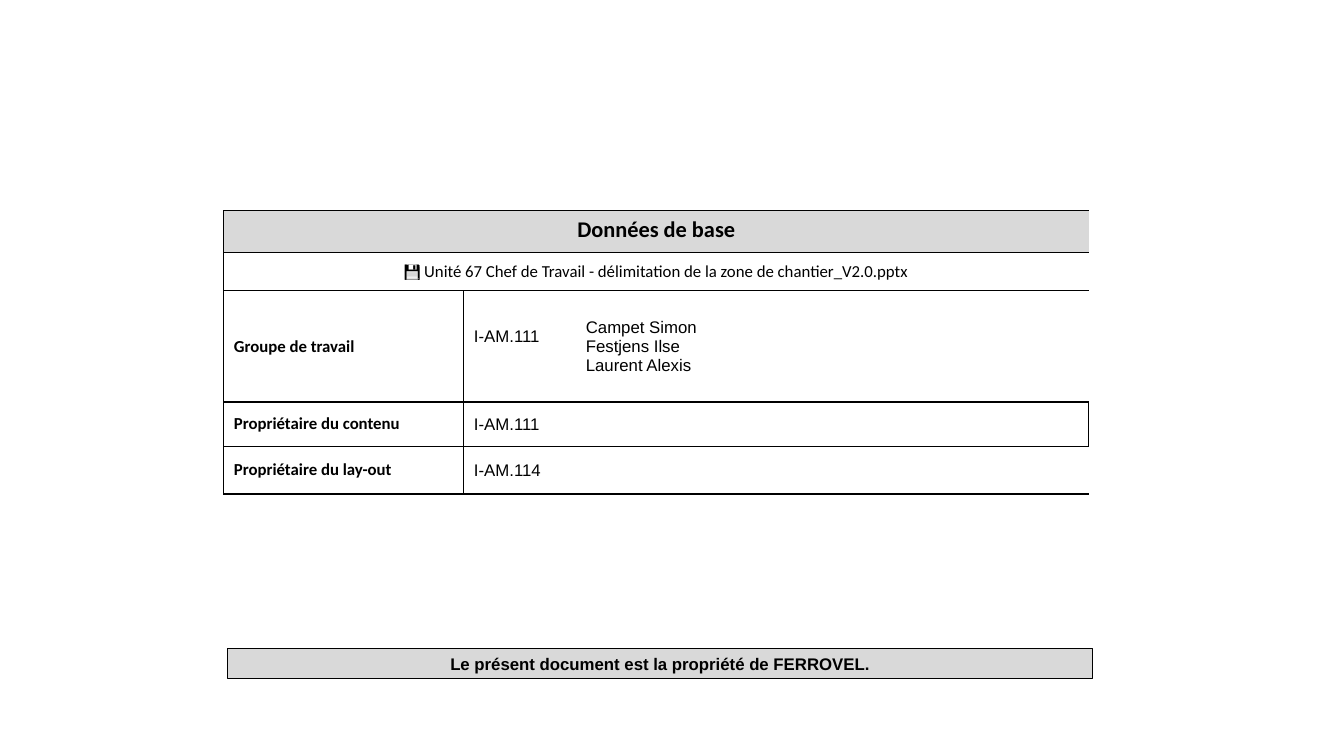
from dataclasses import dataclass

from lxml import etree
from pptx import Presentation
from pptx.dml.color import RGBColor
from pptx.enum.shapes import MSO_SHAPE
from pptx.enum.text import MSO_ANCHOR, PP_ALIGN
from pptx.oxml.ns import qn
from pptx.slide import Slide
from pptx.table import Table, _Cell
from pptx.text.text import TextFrame
from pptx.util import Cm, Pt

RECTANGLE = MSO_SHAPE.RECTANGLE
TOP, MIDDLE = MSO_ANCHOR.TOP, MSO_ANCHOR.MIDDLE
LEFT, CENTER = PP_ALIGN.LEFT, PP_ALIGN.CENTER


@dataclass(frozen=True)
class Theme:
    ink: str = "000000"
    band: str = "D9D9D9"
    heading_font: str = "Calibri"
    body_font: str = "Arial"
    title_size: float = 16
    text_size: float = 12
    table_line: float = 1
    box_line: float = 0.75


THEME = Theme()


@dataclass(frozen=True)
class CellSpec:
    row: int
    col: int
    span: int
    text: str = ""
    font: str = THEME.body_font
    size: float = THEME.text_size
    bold: bool = False
    align: PP_ALIGN = LEFT
    anchor: MSO_ANCHOR = MIDDLE
    band: bool = False
    sides: str = "LRTB"
    bottom: float = 0.13


COL_WIDTHS = (6.05, 2.82, 9.05, 3.88)
ROW_HEIGHTS = (1.06, 0.96, 2.8, 1.12, 1.2)
TABLE_LEFT, TABLE_TOP = 5.64, 5.31
HEADING = THEME.heading_font

CELLS = (
    CellSpec(0, 0, 4, "Données de base", HEADING, THEME.title_size, True, CENTER, TOP, True),
    CellSpec(1, 0, 4, "💾 Unité 67 Chef de Travail - délimitation de la zone de chantier_V2.0.pptx",
             HEADING, align=CENTER),
    CellSpec(2, 0, 1, "Groupe de travail", HEADING, bold=True),
    CellSpec(2, 1, 1, "I-AM.111", sides="LTB", bottom=0.64),
    CellSpec(2, 2, 2, "Campet Simon\nFestjens Ilse\nLaurent Alexis", sides="RTB"),
    CellSpec(3, 0, 1, "Propriétaire du contenu", HEADING, bold=True),
    CellSpec(3, 1, 2, "I-AM.111", sides="LTB"),
    CellSpec(3, 3, 1, sides="RTB"),
    CellSpec(4, 0, 1, "Propriétaire du lay-out", HEADING, bold=True),
    CellSpec(4, 1, 3, "I-AM.114"),
)


def write_text(tf: TextFrame, text: str, font: str, size: float, bold: bool, align: PP_ALIGN) -> None:
    tf.text = text
    for p in tf.paragraphs:
        p.alignment = align
        for r in p.runs:
            r.font.name = font
            r.font.size = Pt(size)
            r.font.bold = bold
            r.font.color.rgb = RGBColor.from_string(THEME.ink)


def set_borders(cell: _Cell, sides: str) -> None:
    tc_pr = cell._tc.get_or_add_tcPr()
    for side in "LRTB":
        ln = etree.SubElement(tc_pr, qn(f"a:ln{side}"), w=str(Pt(THEME.table_line)))
        if side in sides:
            fill = etree.SubElement(ln, qn("a:solidFill"))
            etree.SubElement(fill, qn("a:srgbClr"), val=THEME.ink)
        else:
            etree.SubElement(ln, qn("a:noFill"))


def fill_cell(table: Table, spec: CellSpec) -> None:
    last = spec.col + spec.span - 1
    for col in range(spec.col, last + 1):
        cell = table.cell(spec.row, col)
        hidden = ("" if col == spec.col else "L") + ("" if col == last else "R")
        set_borders(cell, "".join(s for s in spec.sides if s not in hidden))
        if spec.band:
            cell.fill.solid()
            cell.fill.fore_color.rgb = RGBColor.from_string(THEME.band)
        else:
            cell.fill.background()
    cell = table.cell(spec.row, spec.col)
    if spec.span > 1:
        cell.merge(table.cell(spec.row, last))
    cell.vertical_anchor = spec.anchor
    cell.margin_bottom = Cm(spec.bottom)
    write_text(cell.text_frame, spec.text, spec.font, spec.size, spec.bold, spec.align)


def add_data_table(s: Slide) -> None:
    table = s.shapes.add_table(len(ROW_HEIGHTS), len(COL_WIDTHS), Cm(TABLE_LEFT), Cm(TABLE_TOP),
                               Cm(sum(COL_WIDTHS)), Cm(sum(ROW_HEIGHTS))).table
    table.first_row = False
    table.horz_banding = False
    for column, width in zip(table.columns, COL_WIDTHS):
        column.width = Cm(width)
    for row, height in zip(table.rows, ROW_HEIGHTS):
        row.height = Cm(height)
    for spec in CELLS:
        fill_cell(table, spec)


def add_ownership_box(s: Slide) -> None:
    sp = s.shapes.add_shape(RECTANGLE, Cm(5.74), Cm(16.33), Cm(sum(COL_WIDTHS)), Cm(0.77))
    sp.shadow.inherit = False
    sp.fill.solid()
    sp.fill.fore_color.rgb = RGBColor.from_string(THEME.band)
    sp.line.color.rgb = RGBColor.from_string(THEME.ink)
    sp.line.width = Pt(THEME.box_line)
    tf = sp.text_frame
    tf.word_wrap = True
    tf.vertical_anchor = MIDDLE
    write_text(tf, "Le présent document est la propriété d’FERROVEL.".replace("d’", "de "),
               THEME.body_font, THEME.text_size, True, CENTER)


def main() -> None:
    """Build the document data slide and save it."""
    prs = Presentation()
    prs.slide_width, prs.slide_height = Cm(33.87), Cm(19.05)
    s = prs.slides.add_slide(prs.slide_layouts[6])
    add_ownership_box(s)
    add_data_table(s)
    prs.save("out.pptx")


if __name__ == "__main__":
    main()
